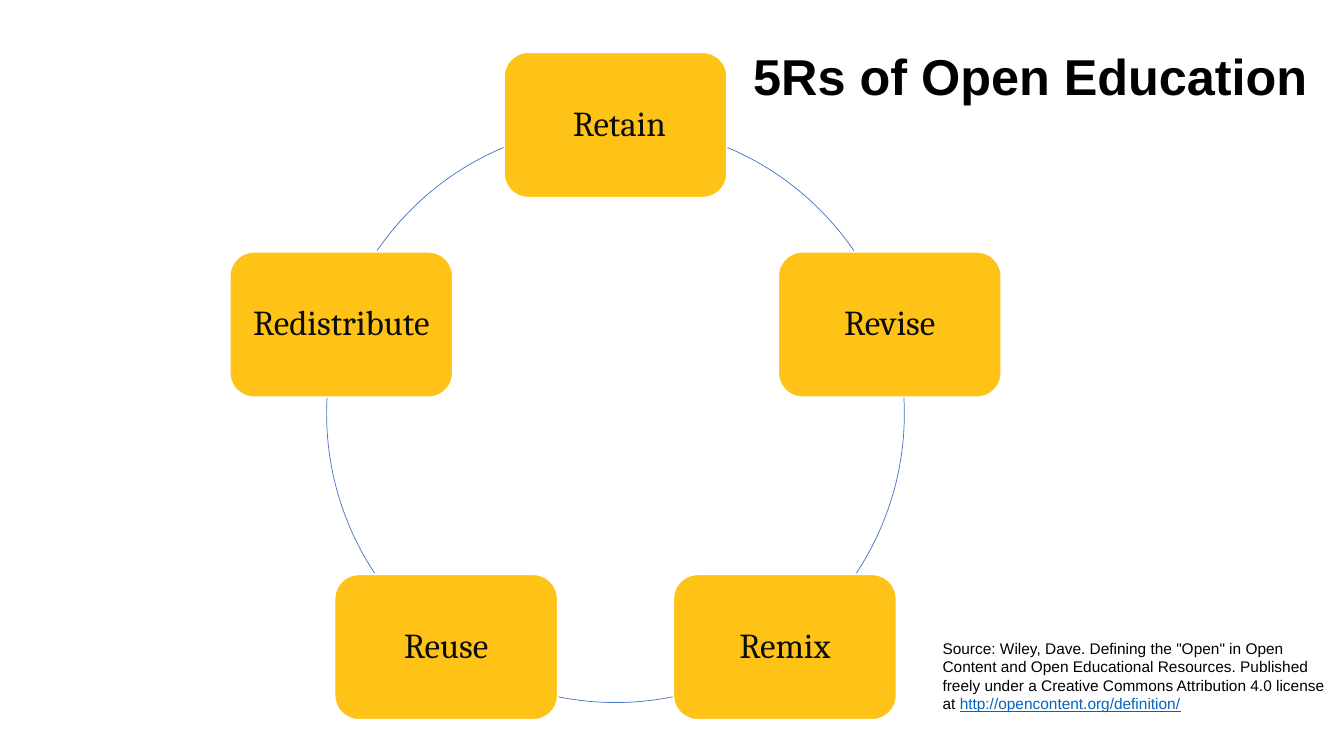
from math import cos, radians, sin

from pptx import Presentation
from pptx import util as u
from pptx.dml.color import RGBColor
from pptx.enum import shapes, text

PX = 9144
STEPS = [" Retain", "Revise", "Remix", "Reuse", "Redistribute"]
ARCS = [(22.8, 55.6), (86.8, 123.5), (168.6, 191.4), (236.5, 273.2), (304.4, 337.2)]
SOURCE = ('Source: Wiley, Dave. Defining the "Open" in Open Content and Open '
          "Educational Resources. Published freely under a Creative Commons "
          "Attribution 4.0 license at ")
LINK = "http://opencontent.org/definition/"


def px(*vals):
    return [u.Emu(v * PX) for v in vals]


def paint(part, color):
    if hasattr(part, "solid"):
        part.solid()
        part = part.fore_color
    part.rgb = RGBColor.from_string(color)


def style(run, font, size, color, bold=False, under=False):
    run.font.name = font
    run.font.size = u.Pt(size)
    run.font.bold = bold
    run.font.underline = under
    paint(run.font.color, color)


def add_arc(slide, box, start, end):
    arc = slide.shapes.add_shape(shapes.MSO_SHAPE.ARC, *px(*box))
    arc.shadow.inherit = False
    arc.fill.background()
    paint(arc.line.fill, "4472C4")
    arc.line.width = u.Pt(0.5)
    for i, angle in enumerate((start, end)):
        arc.adjustments[i] = (angle - 90) % 360 * 0.6


def add_step(slide, box, label):
    card = slide.shapes.add_shape(shapes.MSO_SHAPE.ROUNDED_RECTANGLE, *px(*box))
    card.shadow.inherit = False
    paint(card.fill, "FFC217")
    paint(card.line.fill, "FFFFFF")
    card.line.width = u.Pt(1)
    frame = card.text_frame
    frame.text = label
    frame.word_wrap = True
    frame.vertical_anchor = text.MSO_ANCHOR.MIDDLE
    frame.margin_left = frame.margin_right = frame.margin_top = frame.margin_bottom = u.Inches(0.1)
    line = frame.paragraphs[0]
    line.alignment = text.PP_ALIGN.CENTER
    line.line_spacing = 0.9
    style(line.runs[0], "Cambria", 25, "0D0D0D")


def add_cycle(slide, box):
    left, top, side, _ = box
    wide, high = 221, 144
    rad = side / 2
    for i, (label, span) in enumerate(zip(STEPS, ARCS)):
        turn = radians(i * 360 / len(STEPS))
        mid_x = left + rad + rad * sin(turn)
        mid_y = top + rad - rad * cos(turn)
        add_step(slide, (round(mid_x - wide / 2), round(mid_y - high / 2), wide, high), label)
        add_arc(slide, box, *span)


def add_title(slide, box):
    title = slide.shapes.title
    title.left, title.top, title.width, title.height = px(*box)
    frame = title.text_frame
    frame.text = "5Rs of Open Education"
    frame.word_wrap = True
    frame.auto_size = text.MSO_AUTO_SIZE.NONE
    frame.vertical_anchor = text.MSO_ANCHOR.TOP
    line = frame.paragraphs[0]
    line.alignment = text.PP_ALIGN.LEFT
    style(line.runs[0], "Arial", 36, "000000", bold=True)


def add_source(slide, box):
    frame = slide.shapes.add_textbox(*px(*box)).text_frame
    frame.word_wrap = True
    frame.text = SOURCE
    line = frame.paragraphs[0]
    style(line.runs[0], "Arial", 11, "000000")
    link = line.add_run()
    link.text = LINK
    style(link, "Arial", 11, "0563C1", under=True)


def main():
    deck = Presentation()
    deck.slide_width, deck.slide_height = px(1333, 750)
    slide = deck.slides.add_slide(deck.slide_layouts[5])
    add_cycle(slide, (324, 124, 573, 573))
    add_title(slide, (737, 40, 591, 71))
    add_source(slide, (925, 629, 402, 84))
    deck.save("out.pptx")


if __name__ == "__main__":
    main()
